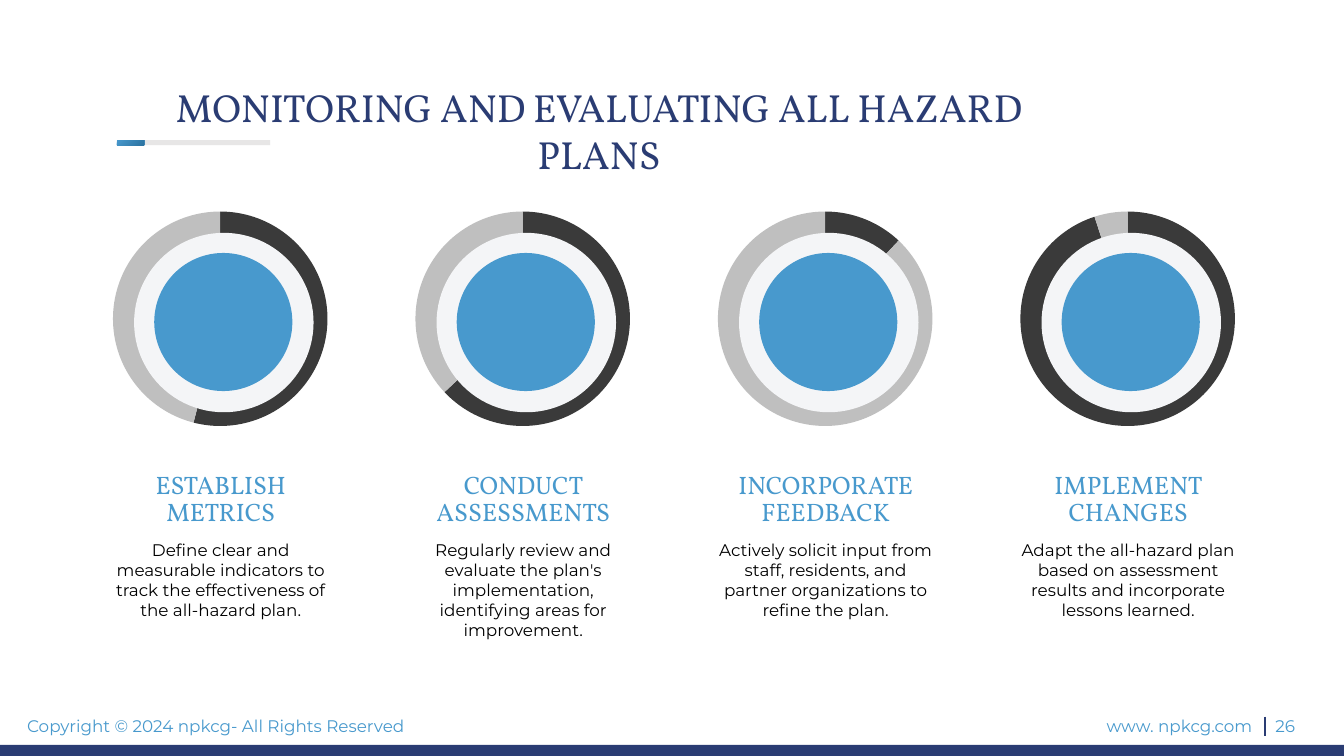
import pptx
import pptx.chart.data
import pptx.dml.color
import pptx.enum.chart
import pptx.enum.shapes
import pptx.enum.text
import pptx.oxml
import pptx.oxml.ns
import pptx.util

Inches = pptx.util.Inches
Pt = pptx.util.Pt
SHAPE = pptx.enum.shapes.MSO_SHAPE
ALIGN = pptx.enum.text.PP_ALIGN

COLORS = {
    "navy": "2A3C73", "blue": "4899CD", "deep": "2D75A3", "dark": "3A3A3A",
    "silver": "BFBFBF", "pale": "F4F5F7", "track": "E7E6E6", "black": "000000",
}
SERIF = "Vollkorn"
SANS = "Montserrat"
TITLE_STYLE = {"name": SERIF, "size": Pt(28)}
HEADING_STYLE = {"name": SERIF, "size": Pt(18)}
BODY_STYLE = {"name": SANS, "size": Pt(12)}

STEPS = [
    ("ESTABLISH METRICS", 2.44, 54,
     "Define clear and measurable indicators to track the effectiveness of the all-hazard plan."),
    ("CONDUCT ASSESSMENTS", 2.93, 63,
     "Regularly review and evaluate the plan's implementation, identifying areas for improvement."),
    ("INCORPORATE FEEDBACK", 2.93, 12,
     "Actively solicit input from staff, residents, and partner organizations to refine the plan."),
    ("IMPLEMENT CHANGES", 2.64, 95,
     "Adapt the all-hazard plan based on assessment results and incorporate lessons learned."),
]
COLUMN_LEFT, COLUMN_PITCH, COLUMN_WIDTH = 0.97, 3, 2.44


def color(name):
    return pptx.dml.color.RGBColor.from_string(COLORS[name])


def box(x, y, w, h):
    return [Inches(v) for v in (x, y, w, h)]


def add_text(s, area, text, style, ink, align=ALIGN.LEFT, spacing=1.0, **insets):
    tf = s.shapes.add_textbox(*box(*area)).text_frame
    tf.word_wrap = True
    for side, value in insets.items():
        setattr(tf, f"margin_{side}", Inches(value))
    p = tf.paragraphs[0]
    p.alignment = align
    p.line_spacing = spacing
    r = p.add_run()
    r.text = text
    for key, value in style.items():
        setattr(r.font, key, value)
    r.font.color.rgb = color(ink)


def add_solid(s, kind, area, fill):
    sp = s.shapes.add_shape(kind, *box(*area))
    sp.shadow.inherit = False
    sp.fill.solid()
    sp.fill.fore_color.rgb = color(fill)
    sp.line.fill.background()
    return sp


def add_title(s, x, y, w, h):
    add_text(s, (x, y, w, h), "MONITORING AND EVALUATING ALL HAZARD PLANS",
             TITLE_STYLE, "navy", ALIGN.CENTER, left=0.2, right=0.2)
    bar_x, bar_y = x + 0.16, y + 0.61
    add_solid(s, SHAPE.RECTANGLE, (bar_x, bar_y, 1.52, 0.05), "track")
    accent = add_solid(s, SHAPE.RECTANGLE, (bar_x, bar_y, 0.27, 0.05), "blue")
    accent.fill.gradient()
    accent.fill.gradient_angle = 315
    for stop, name, position in zip(accent.fill.gradient_stops, ("blue", "deep"), (0, 0.97)):
        stop.color.rgb = color(name)
        stop.position = position


def add_ring(s, x, y, w, h, share):
    data = pptx.chart.data.CategoryChartData()
    data.categories = ["1", "2"]
    data.add_series("Series 1", (share, 100 - share))
    chart = s.shapes.add_chart(pptx.enum.chart.XL_CHART_TYPE.PIE, *box(x, y, w, h), data).chart
    chart.has_legend = False
    chart.has_title = False
    for key, value in {"name": SANS, "size": Pt(10)}.items():
        setattr(chart.font, key, value)
    chart.font.color.rgb = color("black")
    plot = chart.plots[0]
    plot.vary_by_categories = False
    for i, name in enumerate(("dark", "silver")):
        point = plot.series[0].points[i].format
        point.fill.solid()
        point.fill.fore_color.rgb = color(name)
        point.line.fill.background()
    place_plot(chart)
    for inset, size, name in ((0.22, 1.78, "pale"), (0.42, 1.37, "blue")):
        add_solid(s, SHAPE.OVAL, (x + inset, y + inset + 0.02, size, size), name)


def place_plot(chart):
    area = chart.element.find(".//" + pptx.oxml.ns.qn("c:plotArea"))
    for old in area.findall(pptx.oxml.ns.qn("c:layout")):
        area.remove(old)
    values = {"layoutTarget": "inner", "xMode": "edge", "yMode": "edge",
              "x": 0.005, "y": 0.005, "w": 0.99, "h": 0.988}
    parts = "".join(f'<c:{key} val="{value}"/>' for key, value in values.items())
    area.insert(0, pptx.oxml.parse_xml(
        f'<c:layout {pptx.oxml.ns.nsdecls("c")}><c:manualLayout>{parts}</c:manualLayout></c:layout>'))


def add_step(s, x, y, w, heading, heading_width, share, body):
    add_ring(s, x + 0.14, y, 2.15, 2.19, share)
    add_text(s, (x + (w - heading_width) / 2, y + 2.57, heading_width, 0.31),
             heading, HEADING_STYLE, "blue", ALIGN.CENTER, 0.9)
    add_text(s, (x, y + 2.88, w, 1.54), body, BODY_STYLE, "black", ALIGN.CENTER, top=0.4)


def add_footer(s, x, y, w, h):
    add_solid(s, SHAPE.RECTANGLE, (x, y + h - 0.11, w, 0.11), "navy")
    add_text(s, (x + 0.17, y, 6.71, 0.3), "Copyright © 2024 npkcg- All Rights Reserved",
             BODY_STYLE, "blue")
    add_text(s, (x + 10.61, y, 1.91, 0.3), "www. npkcg.com", BODY_STYLE, "blue", ALIGN.RIGHT)
    add_text(s, (x + 12.55, y, 0.62, 0.3), "26", BODY_STYLE, "blue")
    divider = s.shapes.add_connector(pptx.enum.shapes.MSO_CONNECTOR.STRAIGHT,
                                     *box(x + 12.55, y + 0.06, x + 12.55, y + 0.25))
    divider.line.color.rgb = color("navy")
    divider.line.width = Pt(1.5)
    divider.element.spPr.append(
        pptx.oxml.parse_xml(f'<a:effectLst {pptx.oxml.ns.nsdecls("a")}/>'))


def main():
    prs = pptx.Presentation()
    prs.slide_width = Inches(13.33)
    prs.slide_height = Inches(7.5)
    s = prs.slides.add_slide(prs.slide_layouts[6])
    add_footer(s, 0, 7.05, 13.33, 0.45)
    add_title(s, 1, 0.78, 9.88, 0.6)
    for i, step in enumerate(STEPS):
        add_step(s, COLUMN_LEFT + i * COLUMN_PITCH, 2.07, COLUMN_WIDTH, *step)
    prs.save("out.pptx")


if __name__ == "__main__":
    main()
